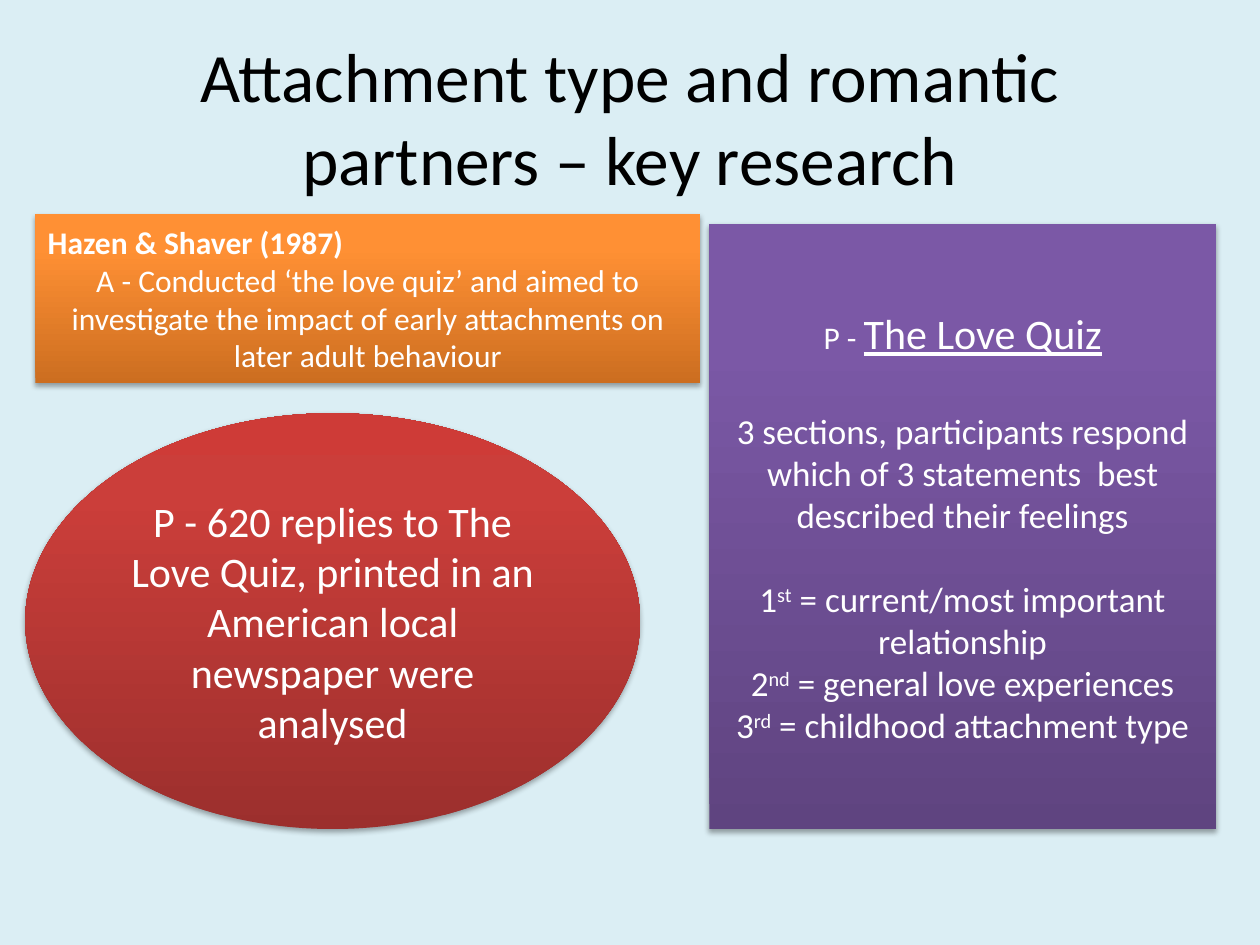
from copy import deepcopy
from dataclasses import dataclass

from lxml import etree
from pptx import Presentation
from pptx.dml.color import RGBColor
from pptx.enum.shapes import MSO_SHAPE
from pptx.enum.text import MSO_ANCHOR, PP_ALIGN
from pptx.oxml.ns import qn
from pptx.util import Inches, Pt

RECTANGLE, OVAL = MSO_SHAPE.RECTANGLE, MSO_SHAPE.OVAL
MIDDLE = MSO_ANCHOR.MIDDLE
LEFT, CENTER = PP_ALIGN.LEFT, PP_ALIGN.CENTER
FONT = "Calibri"
LINE_HEIGHT = 1.22
GRADIENT_POSITIONS = (0, 0.8, 1)
COLORS = {
    "background": "DBEEF4",
    "title": "000000",
    "text": "FFFFFF",
    "shadow": "000000",
}
GRADIENTS = {
    "orange": ("CC6E20", "FF9034", "FF9136"),
    "red": ("9C2F2D", "CB3E3A", "CE3B37"),
    "purple": ("5F4480", "7B58A6", "7C57A8"),
}


@dataclass
class TextRun:
    text: str
    size: float
    bold: bool = False
    underline: bool = False
    superscript: bool = False


@dataclass
class TextParagraph:
    runs: list[TextRun]
    alignment: PP_ALIGN = CENTER
    space_before: float = 0


@dataclass
class Panel:
    kind: MSO_SHAPE
    box: tuple[float, float, float, float]
    gradient: str
    paragraphs: list[TextParagraph]


def quiz_section(number: str, suffix: str, meaning: str, space_before: float = 0) -> TextParagraph:
    runs = [
        TextRun(number, 20),
        TextRun(suffix, 20, superscript=True),
        TextRun(f" = {meaning}", 20),
    ]
    return TextParagraph(runs, space_before=space_before)


PANELS = [
    Panel(RECTANGLE, (0.28, 1.7, 5.28, 1.34), "orange", [
        TextParagraph([TextRun("Hazen & Shaver (1987)", 18, bold=True)], LEFT),
        TextParagraph([TextRun(
            "A - Conducted ‘the love quiz’ and aimed to investigate the impact "
            "of early attachments on later adult behaviour", 18)]),
    ]),
    Panel(OVAL, (0.2, 3.28, 4.88, 3.3), "red", [
        TextParagraph([TextRun(
            "P - 620 replies to The Love Quiz, printed in an American local "
            "newspaper were analysed", 24)]),
    ]),
    Panel(RECTANGLE, (5.63, 1.78, 4.02, 4.8), "purple", [
        TextParagraph([TextRun("P - ", 18), TextRun("The Love Quiz", 24, underline=True)]),
        TextParagraph([TextRun(
            "3 sections, participants respond which of 3 statements  best "
            "described their feelings", 20)], space_before=24 * LINE_HEIGHT),
        quiz_section("1", "st", "current/most important relationship", 20 * LINE_HEIGHT),
        quiz_section("2", "nd", "general love experiences"),
        quiz_section("3", "rd", "childhood attachment type"),
    ]),
]


def write_text(shape, paragraphs: list[TextParagraph], color: str) -> None:
    frame = shape.text_frame
    frame.word_wrap = True
    frame.vertical_anchor = MIDDLE
    for index, content in enumerate(paragraphs):
        paragraph = frame.add_paragraph() if index else frame.paragraphs[0]
        paragraph.alignment = content.alignment
        paragraph.space_before = Pt(content.space_before)
        for item in content.runs:
            run = paragraph.add_run()
            run.text = item.text
            font = run.font
            font.name = FONT
            font.size = Pt(item.size)
            font.bold = item.bold
            font.underline = item.underline
            font.color.rgb = RGBColor.from_string(COLORS[color])
            if item.superscript:
                font._element.set("baseline", "30000")


def fill_gradient(shape, colors: tuple[str, str, str]) -> None:
    fill = shape.fill
    fill.gradient()
    fill.gradient_angle = 90
    stop_list = shape._element.spPr.find(qn("a:gradFill")).find(qn("a:gsLst"))
    stop_list.append(deepcopy(stop_list[-1]))
    for stop, position, color in zip(fill.gradient_stops, GRADIENT_POSITIONS, colors):
        stop.position = position
        stop.color.rgb = RGBColor.from_string(color)


def add_shadow(shape) -> None:
    shape.shadow.inherit = False
    effects = shape._element.spPr.find(qn("a:effectLst"))
    shadow = etree.SubElement(
        effects, qn("a:outerShdw"), blurRad=str(Pt(3.1)), dist=str(Pt(1.8)),
        dir="5400000", rotWithShape="0")
    color = etree.SubElement(shadow, qn("a:srgbClr"), val=COLORS["shadow"])
    etree.SubElement(color, qn("a:alpha"), val="35000")


def add_panel(slide, panel: Panel) -> None:
    shape = slide.shapes.add_shape(panel.kind, *map(Inches, panel.box))
    fill_gradient(shape, GRADIENTS[panel.gradient])
    shape.line.fill.background()
    add_shadow(shape)
    write_text(shape, panel.paragraphs, "text")


def add_title(slide, text: str) -> None:
    title = slide.shapes.add_textbox(Inches(0.5), Inches(0.3), Inches(9), Inches(1.25))
    write_text(title, [TextParagraph([TextRun(text, 39.6)])], "title")


def main() -> None:
    presentation = Presentation()
    presentation.slide_width = Inches(10)
    presentation.slide_height = Inches(7.5)
    slide = presentation.slides.add_slide(presentation.slide_layouts[6])
    background = slide.background.fill
    background.solid()
    background.fore_color.rgb = RGBColor.from_string(COLORS["background"])
    add_title(slide, "Attachment type and romantic partners – key research")
    for panel in PANELS:
        add_panel(slide, panel)
    presentation.save("out.pptx")


if __name__ == "__main__":
    main()
